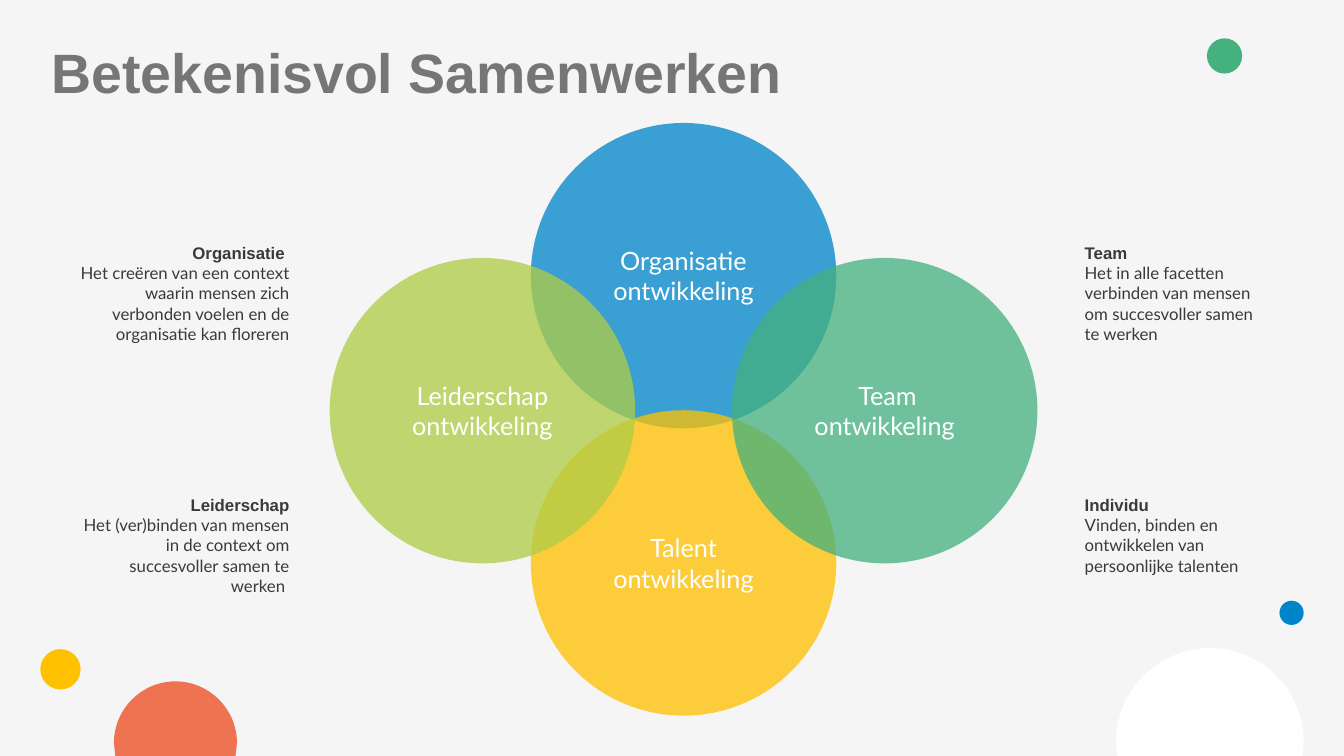
import math
from dataclasses import dataclass

from lxml import etree
from pptx import Presentation
from pptx.dml.color import RGBColor
from pptx.enum import shapes, text
from pptx.oxml import ns
from pptx.util import Inches, Pt


@dataclass(frozen=True)
class Theme:
    background: str = "F5F5F5"
    white: str = "FFFFFF"
    title: str = "767676"
    body: str = "3A3A3A"
    blue: str = "0085C8"
    yellow: str = "FFC000"
    lime: str = "AFCC46"
    green: str = "44B17F"
    coral: str = "EE7351"
    heading_font: str = "Arial"
    body_font: str = "Lato"
    title_size: float = 39.6
    label_size: float = 18
    body_size: float = 12
    circle_opacity: int = 76


THEME = Theme()
SLIDE_WIDTH, SLIDE_HEIGHT = 13.33, 7.5
BEZIER_QUARTER = 0.55  # handle length of a quarter circle, in radii

# (colour, left, top, diameter)
DOTS = [
    (THEME.yellow, 0.4, 6.44, 0.4),
    (THEME.green, 11.97, 0.38, 0.35),
    (THEME.blue, 12.69, 5.96, 0.24),
]
# (colour, centre x, centre y, radius)
EDGE_CIRCLES = [
    (THEME.white, 12, 7.36, 0.93),
    (THEME.coral, 1.74, 7.37, 0.61),
]
# (label, colour, share of free width, share of free height)
CIRCLES = [
    ("Organisatie ontwikkeling", THEME.blue, 0.5, 0),
    ("Talent ontwikkeling", THEME.yellow, 0.5, 1),
    ("Leiderschap ontwikkeling", THEME.lime, 0, 0.47),
    (" Team ontwikkeling", THEME.green, 1, 0.47),
]
LEFT, RIGHT = text.PP_ALIGN.LEFT, text.PP_ALIGN.RIGHT
# (box, alignment, heading, paragraphs)
DESCRIPTIONS = [
    ((10.66, 2.36, 1.92, 1.11), LEFT, "Team",
     ["Het in alle facetten",
      "verbinden van mensen om succesvoller samen te werken"]),
    ((10.66, 4.86, 2.1, 0.91), LEFT, "Individu",
     ["Vinden, binden en", "ontwikkelen van", "persoonlijke talenten"]),
    ((0.58, 2.36, 2.39, 1.11), RIGHT, "Organisatie ",
     ["Het creëren van een context waarin mensen zich verbonden voelen "
      "en de organisatie kan floreren"]),
    ((0.66, 4.86, 2.31, 0.91), RIGHT, "Leiderschap",
     ["Het (ver)binden van mensen in de context om succesvoller samen "
      "te werken "]),
]


def set_attributes(target, values):
    for name, value in values.items():
        setattr(target, name, value)


def format_font(paragraph, name, size, color, bold=False):
    set_attributes(paragraph.font, {"name": name, "size": Pt(size), "bold": bold})
    paragraph.font.color.rgb = RGBColor.from_string(color)


def paint(shape, color, opacity=100):
    shape.shadow.inherit = False
    shape.line.fill.background()
    shape.fill.solid()
    shape.fill.fore_color.rgb = RGBColor.from_string(color)
    if opacity < 100:
        color_element = shape.fill._xPr.find(".//" + ns.qn("a:srgbClr"))
        alpha = etree.SubElement(color_element, ns.qn("a:alpha"))
        alpha.set("val", str(opacity * 1000))


def add_circle(slide, left, top, diameter, color, opacity=100):
    box = map(Inches, (left, top, diameter, diameter))
    circle = slide.shapes.add_shape(shapes.MSO_SHAPE.OVAL, *box)
    paint(circle, color, opacity)
    return circle


def bend(segments):
    """Turn three straight segments into one cubic curve."""
    curve = etree.Element(ns.qn("a:cubicBezTo"))
    segments[0].addprevious(curve)
    for segment in segments:
        curve.append(segment[0])
        segment.getparent().remove(segment)


def add_edge_circle(slide, color, center_x, center_y, radius):
    """Circle cut off by the bottom edge of the slide."""
    drop = (SLIDE_HEIGHT - center_y) / radius
    cut = math.sqrt(1 - drop ** 2)
    handle = BEZIER_QUARTER
    outline = [(0, -1), (handle, -1), (1, -handle), (1, 0),
               (cut, drop), (-cut, drop), (-1, 0),
               (-1, -handle), (-handle, -1), (0, -1)]
    points = [(Inches(center_x + radius * x), Inches(center_y + radius * y))
              for x, y in outline]
    builder = slide.shapes.build_freeform(*points[0])
    builder.add_line_segments(points[1:], close=True)
    shape = builder.convert_to_shape()
    segments = list(shape._element.iter(ns.qn("a:lnTo")))
    bend(segments[:3])
    bend(segments[6:9])
    paint(shape, color)


def add_decorations(slide):
    for edge_circle in EDGE_CIRCLES:
        add_edge_circle(slide, *edge_circle)
    for color, left, top, diameter in DOTS:
        add_circle(slide, left, top, diameter, color)


def add_title(slide, box, wording):
    title = slide.shapes.title
    set_attributes(title, dict(zip(("left", "top", "width", "height"),
                                   map(Inches, box))))
    frame = title.text_frame
    set_attributes(frame, {"text": wording, "word_wrap": True,
                           "auto_size": text.MSO_AUTO_SIZE.NONE,
                           "vertical_anchor": text.MSO_ANCHOR.MIDDLE})
    paragraph = frame.paragraphs[0]
    set_attributes(paragraph, {"alignment": LEFT, "line_spacing": 0.9})
    format_font(paragraph, THEME.heading_font, THEME.title_size, THEME.title, True)


def add_circle_cluster(slide, box, diameter):
    left, top, width, height = box
    for label, color, share_x, share_y in CIRCLES:
        circle = add_circle(slide, left + share_x * (width - diameter),
                            top + share_y * (height - diameter),
                            diameter, color, THEME.circle_opacity)
        frame = circle.text_frame
        set_attributes(frame, {"text": label, "word_wrap": True,
                               "vertical_anchor": text.MSO_ANCHOR.MIDDLE})
        paragraph = frame.paragraphs[0]
        paragraph.alignment = text.PP_ALIGN.CENTER
        format_font(paragraph, THEME.body_font, THEME.label_size, THEME.white)


def add_description(slide, box, alignment, heading, lines):
    frame = slide.shapes.add_textbox(*map(Inches, box)).text_frame
    set_attributes(frame, {"text": "\n".join([heading, *lines]), "word_wrap": True,
                           "auto_size": text.MSO_AUTO_SIZE.SHAPE_TO_FIT_TEXT})
    for index, paragraph in enumerate(frame.paragraphs):
        is_heading = index == 0
        paragraph.alignment = alignment
        font = THEME.heading_font if is_heading else THEME.body_font
        format_font(paragraph, font, THEME.body_size, THEME.body, is_heading)


def main():
    presentation = Presentation()
    set_attributes(presentation, {"slide_width": Inches(SLIDE_WIDTH),
                                  "slide_height": Inches(SLIDE_HEIGHT)})
    slide = presentation.slides.add_slide(presentation.slide_layouts[5])
    slide.background.fill.solid()
    slide.background.fill.fore_color.rgb = RGBColor.from_string(THEME.background)

    add_decorations(slide)
    add_title(slide, (0.41, 0.4, 12.52, 0.69), "Betekenisvol Samenwerken")
    add_circle_cluster(slide, (3.27, 1.22, 7.02, 5.88), 3.03)
    for description in DESCRIPTIONS:
        add_description(slide, *description)

    presentation.save("out.pptx")


if __name__ == "__main__":
    main()
